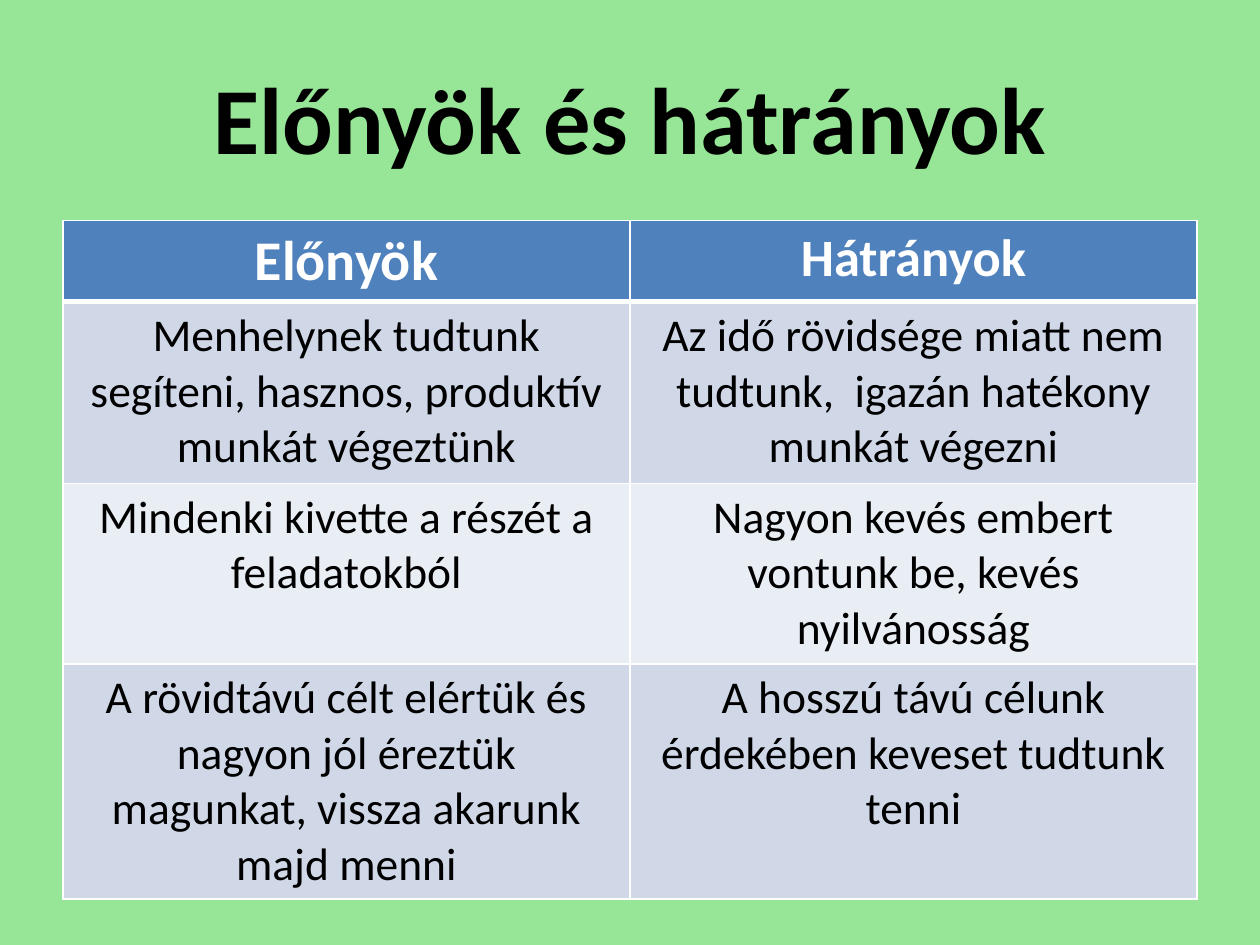
import pptx
import pptx.util
import pptx.dml.color
import pptx.enum.text
import pptx.oxml.ns
from lxml import etree

Pt = pptx.util.Pt
Color = pptx.dml.color.RGBColor.from_string
Anchor = pptx.enum.text.MSO_ANCHOR
CENTER = pptx.enum.text.PP_ALIGN.CENTER

THEME = {
    "font": "Calibri",
    "background": "97E597",
    "text": "000000",
    "header_text": "FFFFFF",
    "header_fill": "4F81BD",
    "band_fills": ["D0D8E8", "E9EDF4"],
    "border": "FFFFFF",
    "title_size": 54,
    "header_sizes": [32, 30],
    "body_size": 26,
}

TITLE = "Előnyök és hátrányok"
ROWS = [
    ["Előnyök", "Hátrányok"],
    [
        "Menhelynek tudtunk segíteni, hasznos, produktív munkát végeztünk",
        "Az idő rövidsége miatt nem tudtunk,  igazán hatékony munkát végezni",
    ],
    [
        "Mindenki kivette a részét a feladatokból",
        "Nagyon kevés embert vontunk be, kevés nyilvánosság",
    ],
    [
        "A rövidtávú célt elértük és nagyon jól éreztük magunkat, vissza akarunk majd menni",
        "A hosszú távú célunk érdekében keveset tudtunk tenni",
    ],
]
ROW_HEIGHTS = [46, 104, 103, 134]
COLUMN_WIDTH = 324


def write_text(frame, text, size, color, bold):
    para = frame.paragraphs[0]
    para.alignment = CENTER
    span = para.add_run()
    span.text = text
    formats = {"name": THEME["font"], "size": Pt(size), "bold": bold}
    for name, value in formats.items():
        setattr(span.font, name, value)
    span.font.color.rgb = Color(color)


def add_border(cell, side, width):
    qn = pptx.oxml.ns.qn
    properties = cell._tc.get_or_add_tcPr()
    line = etree.SubElement(properties, qn(f"a:ln{side}"), w=str(Pt(width)))
    fill = etree.SubElement(line, qn("a:solidFill"))
    etree.SubElement(fill, qn("a:srgbClr"), val=THEME["border"])


deck = pptx.Presentation()
deck.slide_width, deck.slide_height = Pt(720), Pt(540)
page = deck.slides.add_slide(deck.slide_layouts[5])
page.background.fill.solid()
page.background.fill.fore_color.rgb = Color(THEME["background"])

title = page.shapes.title
placement = {"left": Pt(36), "top": Pt(21.6), "width": Pt(648), "height": Pt(90)}
for name, value in placement.items():
    setattr(title, name, value)
title.text_frame.vertical_anchor = Anchor.MIDDLE
write_text(title.text_frame, TITLE, THEME["title_size"], THEME["text"], True)

table = page.shapes.add_table(
    len(ROWS), len(ROWS[0]), Pt(36), Pt(126), Pt(648), Pt(sum(ROW_HEIGHTS))
).table
for column in table.columns:
    column.width = Pt(COLUMN_WIDTH)

for row_index, (texts, height) in enumerate(zip(ROWS, ROW_HEIGHTS)):
    table.rows[row_index].height = Pt(height)
    is_header = row_index == 0
    fill_color = THEME["header_fill"] if is_header else THEME["band_fills"][(row_index - 1) % 2]
    text_color = THEME["header_text"] if is_header else THEME["text"]
    for column_index, text in enumerate(texts):
        cell = table.cell(row_index, column_index)
        cell.vertical_anchor = Anchor.TOP
        size = THEME["header_sizes"][column_index] if is_header else THEME["body_size"]
        write_text(cell.text_frame, text, size, text_color, is_header)
        borders = {"L": 1, "R": 1, "T": 3 if row_index == 1 else 1, "B": 3 if is_header else 1}
        for side, width in borders.items():
            add_border(cell, side, width)
        cell.fill.solid()
        cell.fill.fore_color.rgb = Color(fill_color)

deck.save("out.pptx")
